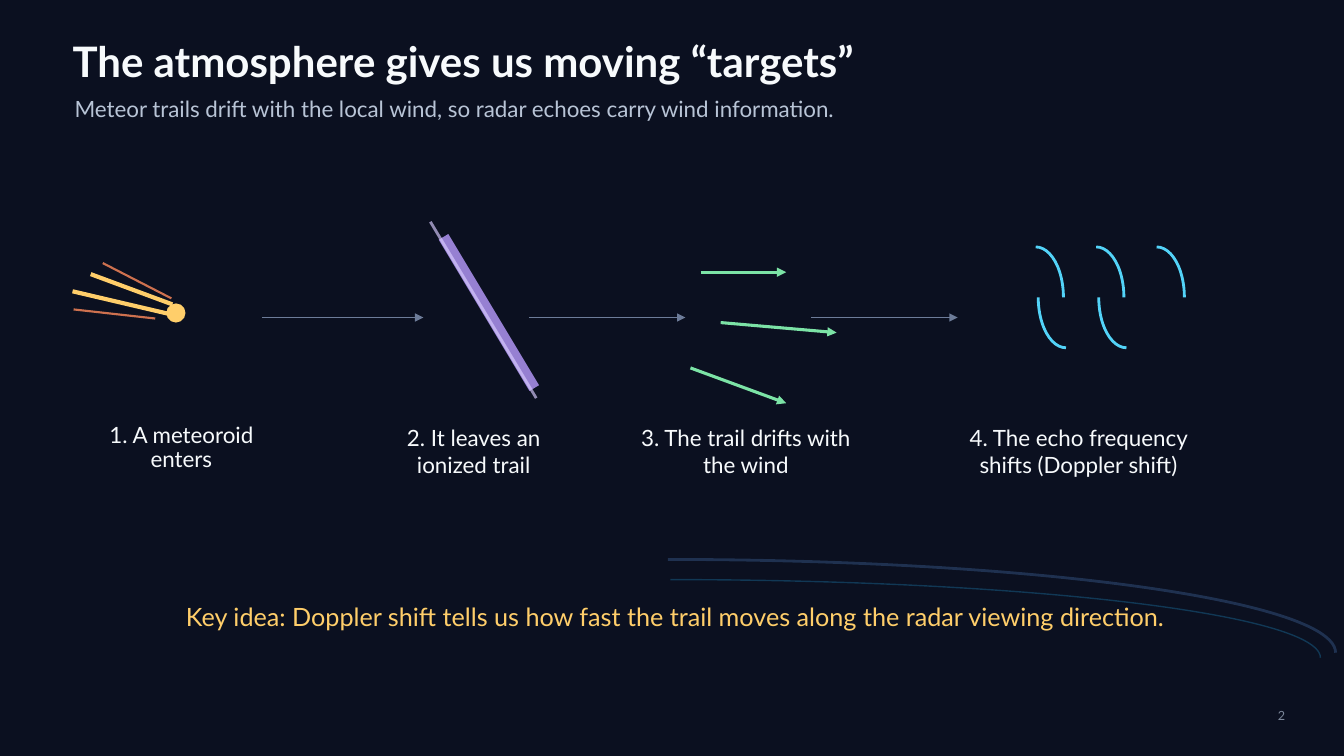
from lxml import etree
from pptx import Presentation
from pptx.dml.color import RGBColor
from pptx.enum import shapes, text
from pptx.oxml.ns import qn
from pptx.util import Pt

NIGHT = RGBColor(0x0B, 0x10, 0x20)
WHITE = RGBColor(0xF7, 0xFA, 0xFC)
MIST = RGBColor(0xB8, 0xC4, 0xD6)
GREY = RGBColor(0x7C, 0x87, 0x9A)
SLATE = RGBColor(0x6D, 0x7C, 0x99)
GOLD = RGBColor(0xFF, 0xCE, 0x6A)
EMBER = RGBColor(0xFF, 0x8A, 0x5B)
VIOLET = RGBColor(0xB9, 0x9C, 0xFF)
LILAC = RGBColor(0xD9, 0xCC, 0xFF)
GREEN = RGBColor(0x7C, 0xE3, 0xA6)
CYAN = RGBColor(0x53, 0xD3, 0xF8)
NAVY = RGBColor(0x22, 0x35, 0x56)
BLUE = RGBColor(0x1A, 0x74, 0xA5)

LEFT, CENTER, RIGHT = text.PP_ALIGN.LEFT, text.PP_ALIGN.CENTER, text.PP_ALIGN.RIGHT


def style_line(shape, color, width, opacity=100):
    """Colour an outline and set its width and opacity in percent."""
    shape.line.color.rgb = color
    shape.line.width = Pt(width)
    outline = shape.element.spPr.find(qn("a:ln"))
    if opacity < 100:
        tint = outline.find(".//" + qn("a:srgbClr"))
        etree.SubElement(tint, qn("a:alpha"), val=str(opacity * 1000))
    return outline


def add_line(slide, start, end, color, width, opacity=100, arrow=False):
    """Draw a straight line between two points."""
    connector = slide.shapes.add_connector(
        shapes.MSO_CONNECTOR.STRAIGHT, *(Pt(value) for value in (*start, *end)))
    outline = style_line(connector, color, width, opacity)
    if arrow:
        etree.SubElement(outline, qn("a:tailEnd"), type="triangle")
    etree.SubElement(connector.element.spPr, qn("a:effectLst"))


def add_lines(slide, left, top, lines, arrow=False):
    """Draw lines whose ends are given relative to a corner."""
    for x1, y1, x2, y2, *look in lines:
        add_line(slide, (left + x1, top + y1), (left + x2, top + y2), *look, arrow=arrow)


def add_arc(slide, box, color, width, opacity=100, rotation=0):
    """Draw a quarter arc inside a box."""
    arc = slide.shapes.add_shape(shapes.MSO_SHAPE.ARC, *map(Pt, box))
    arc.shadow.inherit = False
    arc.fill.background()
    arc.rotation = rotation
    style_line(arc, color, width, opacity)


def add_text(slide, box, words, size, color, align=LEFT, bold=False, spacing=None):
    """Place one paragraph, vertically centred, in a box without margins."""
    frame = slide.shapes.add_textbox(*map(Pt, box)).text_frame
    frame.word_wrap = True
    frame.vertical_anchor = text.MSO_ANCHOR.MIDDLE
    frame.margin_left = frame.margin_right = frame.margin_top = frame.margin_bottom = 0
    paragraph = frame.paragraphs[0]
    paragraph.text = words
    paragraph.alignment = align
    if spacing:
        paragraph.line_spacing = spacing
    font = paragraph.font
    font.name, font.size, font.bold = "Lato", Pt(size), bold
    font.color.rgb = color


def add_backdrop(slide, left, top):
    """Fill the background and draw the two faint horizon arcs."""
    slide.background.fill.solid()
    slide.background.fill.fore_color.rgb = NIGHT
    add_arc(slide, (left, top, 954, 133.2), NAVY, 2, 90)
    add_arc(slide, (left + 14.4, top + 14.4, 928.8, 111.6), BLUE, 1, 40)


def add_header(slide, left, top):
    """Write the title and the subtitle."""
    add_text(slide, (left, top, 856.8, 32.4),
             "The atmosphere gives us moving “targets”", 30, WHITE, bold=True)
    add_text(slide, (left + 1.44, top + 38.16, 799.2, 24.48),
             "Meteor trails drift with the local wind, so radar echoes carry wind information.",
             16, MIST)


def add_meteoroid(slide, left, top):
    """Draw the glowing meteoroid with its streaks."""
    add_lines(slide, left, top, [
        (0, 20.16, 70.56, 36.72, GOLD, 2.98),
        (0.72, 33.12, 59.04, 39.6, EMBER, 1.53, 80),
        (12.96, 7.92, 71.28, 29.52, GOLD, 2.98),
        (21.6, 0, 70.56, 25.2, EMBER, 1.53, 80),
    ])
    head = slide.shapes.add_shape(
        shapes.MSO_SHAPE.OVAL, Pt(left + 66.96), Pt(top + 28.8), Pt(13.68), Pt(13.68))
    head.shadow.inherit = False
    head.fill.solid()
    head.fill.fore_color.rgb = GOLD
    head.line.fill.background()


def add_trail(slide, left, top):
    """Draw the ionized trail with its bright core."""
    add_lines(slide, left, top, [
        (9.36, 10.8, 74.16, 118.8, VIOLET, 8, 80),
        (0, 0, 75.6, 126, LILAC, 2, 65),
    ])


def add_wind(slide, left, top):
    """Draw the three wind arrows."""
    add_lines(slide, left, top, [
        (7.2, 0, 68.4, 0, GREEN, 2.2),
        (21.6, 36, 104.4, 43.2, GREEN, 2.2),
        (0, 68.4, 68.4, 93.6, GREEN, 2.2),
    ], arrow=True)


def add_echo(slide, left, top):
    """Draw the echo wave as arcs turned alternately."""
    for index in range(5):
        add_arc(slide, (left + 21.6 * index, top, 39.6, 72), CYAN, 2,
                rotation=180 * (index % 2))


def add_flow(slide, left, top):
    """Join the stages with arrows and write their captions."""
    for start, end in [(187.2, 302.4), (378, 489.6), (579.6, 684)]:
        add_line(slide, (left + start, top), (left + end, top), SLATE, 1.4, arrow=True)
    captions = [
        (68.4, 122.4, 36, "1. A meteoroid enters", 0.9),
        (270, 136.8, 39.6, "2. It leaves an ionized trail", None),
        (450, 165.6, 39.6, "3. The trail drifts with the wind", None),
        (687.6, 165.6, 39.6, "4. The echo frequency shifts (Doppler shift)", None),
    ]
    for offset, width, height, words, spacing in captions:
        add_text(slide, (left + offset, top + 75.6, width, height), words, 16, WHITE,
                 CENTER, spacing=spacing)


def add_footer(slide, left, top):
    """Write the key idea and the page number."""
    add_text(slide, (left, top, 720, 32.4),
             "Key idea: Doppler shift tells us how fast the trail moves along the radar "
             "viewing direction.", 18, GOLD, CENTER)
    add_text(slide, (left + 774, top + 79.92, 21.6, 14.4), "2", 9, GREY, RIGHT)


def main():
    """Build the slide and save it."""
    presentation = Presentation()
    presentation.slide_width, presentation.slide_height = Pt(960), Pt(540)
    slide = presentation.slides.add_slide(presentation.slide_layouts[6])
    add_backdrop(slide, 0, 399.6)
    add_header(slide, 51.84, 27.36)
    add_flow(slide, 0, 226.8)
    add_meteoroid(slide, 51.84, 187.92)
    add_trail(slide, 307.44, 158.4)
    add_wind(slide, 493.2, 194.4)
    add_echo(slide, 720, 176.4)
    add_footer(slide, 122.4, 424.08)
    presentation.save("out.pptx")


if __name__ == "__main__":
    main()
